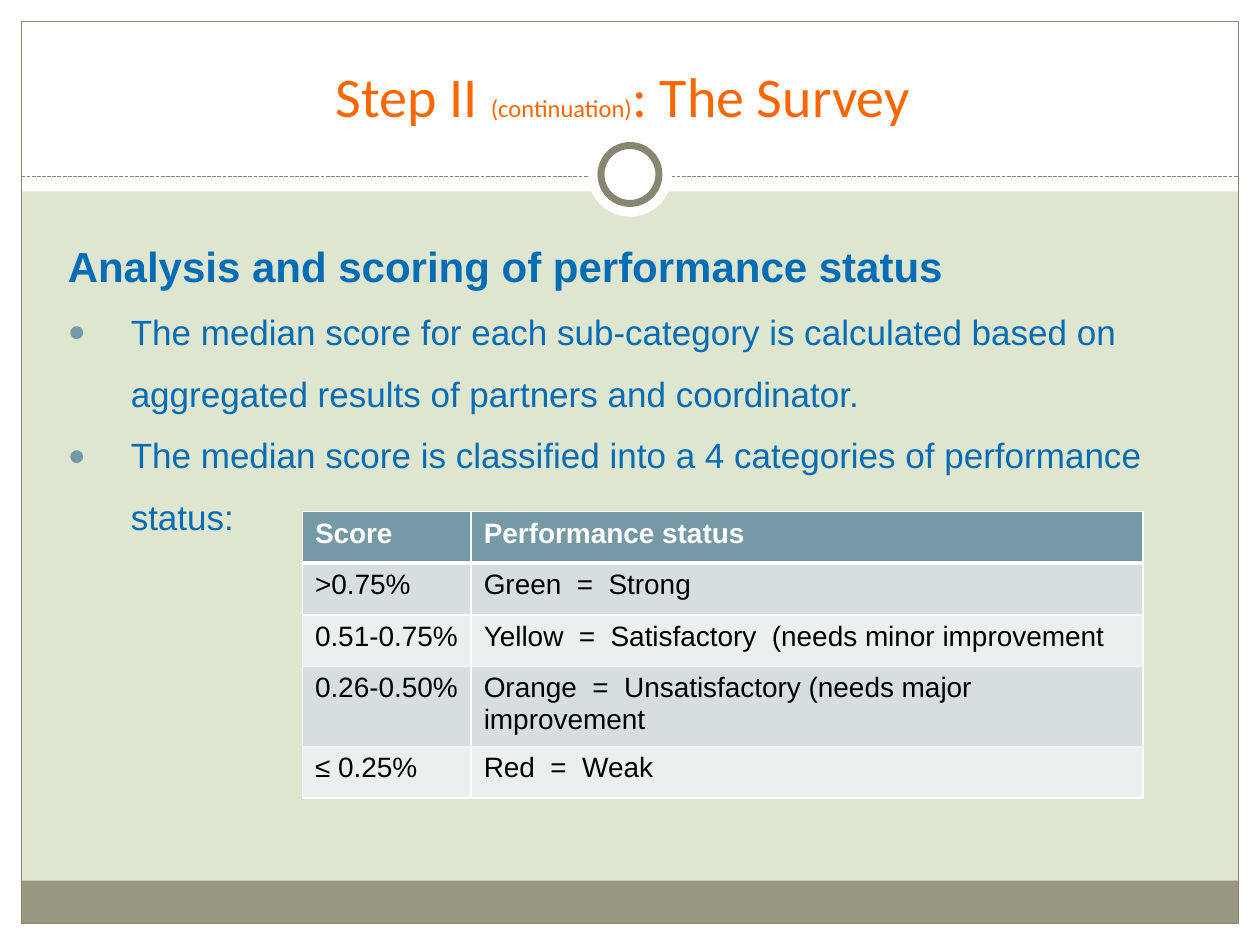
from lxml import etree
from pptx import Presentation
from pptx.dml.color import RGBColor
from pptx.enum.dml import MSO_LINE
from pptx.enum.shapes import MSO_CONNECTOR, MSO_SHAPE
from pptx.enum.text import MSO_ANCHOR, PP_ALIGN
from pptx.oxml.ns import qn
from pptx.util import Inches, Pt

RECTANGLE, OVAL = MSO_SHAPE.RECTANGLE, MSO_SHAPE.OVAL
STRAIGHT, DASH = MSO_CONNECTOR.STRAIGHT, MSO_LINE.SQUARE_DOT
BOTTOM, CENTER = MSO_ANCHOR.BOTTOM, PP_ALIGN.CENTER

COLORS = {
    "background": "DFE6D0", "white": "FFFFFF", "footer": "99987F",
    "frame": "878670", "title": "FF6600", "body": "056CB6",
    "accent": "759AA5", "band_dark": "D6DEE1", "band_light": "ECEFF0",
    "black": "000000",
}
WIDTH, HEIGHT, MARGIN = 10, 7.5, 0.17

TITLE_RUNS = [("Step II ", 32), ("(continuation)", 14), (": The Survey", 32)]
HEADING = "Analysis and scoring of performance status"
BULLETS = [
    "The median score for each sub-category is calculated based on "
    "aggregated results of partners and coordinator.",
    "The median score is classified into a 4 categories of performance status:",
]
SCORES = [
    ("Score", "Performance status"),
    (">0.75%", "Green  =  Strong"),
    ("0.51-0.75%", "Yellow  =  Satisfactory  (needs minor improvement"),
    ("0.26-0.50%", "Orange  =  Unsatisfactory (needs major improvement"),
    ("≤ 0.25%", "Red  =  Weak"),
]


def rgb(name):
    return RGBColor.from_string(COLORS[name])


def add_run(paragraph, text, color, **font_format):
    run = paragraph.add_run()
    run.text = text
    run.font.color.rgb = rgb(color)
    for name, value in font_format.items():
        setattr(run.font, name, value)


def add_box(slide, kind, box, fill=None, line=None, weight=0.75):
    shape = slide.shapes.add_shape(kind, *map(Inches, box))
    shape.shadow.inherit = False
    if fill:
        shape.fill.solid()
        shape.fill.fore_color.rgb = rgb(fill)
    else:
        shape.fill.background()
    if line:
        shape.line.color.rgb = rgb(line)
        shape.line.width = Pt(weight)
    else:
        shape.line.fill.background()


def add_text_frame(slide, box):
    frame = slide.shapes.add_textbox(*map(Inches, box)).text_frame
    frame.word_wrap = True
    return frame


def add_border(slide, box):
    """White margins, footer band and thin frame around the slide."""
    left, top, width, height = box
    inner_width = width - 2 * MARGIN
    bottom = top + height - MARGIN
    margins = [
        (left, bottom, width, MARGIN),
        (left, top, width, 1.52),
        (left, top, MARGIN, height),
        (left + width - MARGIN, top, MARGIN, height),
    ]
    for margin in margins:
        add_box(slide, RECTANGLE, margin, "white")
    add_box(slide, RECTANGLE, (left + MARGIN, bottom - 0.34, inner_width, 0.34), "footer")
    add_box(slide, RECTANGLE,
            (left + MARGIN, top + MARGIN, inner_width, height - 2 * MARGIN), line="frame")


def add_divider(slide, box):
    """Dashed rule with a ring in its middle."""
    left, top, width, height = box
    rule_y = Inches(top + 0.35)
    rule = slide.shapes.add_connector(
        STRAIGHT, Inches(left), rule_y, Inches(left + width), rule_y)
    rule.line.color.rgb = rgb("frame")
    rule.line.width = Pt(0.75)
    rule.line.dash_style = DASH
    etree.SubElement(rule._element.spPr, qn("a:effectLst"))

    center_x, center_y = left + width / 2, top + height / 2
    for size, line in ((height, None), (0.46, "frame")):
        ring = (center_x - size / 2, center_y - size / 2, size, size)
        add_box(slide, OVAL, ring, "white", line, weight=4)


def add_title(slide, box):
    frame = add_text_frame(slide, box)
    frame.vertical_anchor = BOTTOM
    frame.margin_bottom = Inches(0.02)
    paragraph = frame.paragraphs[0]
    paragraph.alignment = CENTER
    for text, size in TITLE_RUNS:
        add_run(paragraph, text, "title", name="Calibri", size=Pt(size))


def set_indent(paragraph, left, first=0, bullet=None):
    properties = paragraph._p.get_or_add_pPr()
    properties.set("marL", str(Inches(left)))
    properties.set("indent", str(Inches(first)))
    if bullet:
        color = etree.SubElement(properties, qn("a:buClr"))
        etree.SubElement(color, qn("a:srgbClr"), val=COLORS["accent"])
        etree.SubElement(properties, qn("a:buSzPct"), val="85000")
        etree.SubElement(properties, qn("a:buFont"), typeface="Arial")
        etree.SubElement(properties, qn("a:buChar"), char=bullet)


def add_body(slide, box):
    frame = add_text_frame(slide, box)
    heading = frame.paragraphs[0]
    heading.line_spacing = 1.47
    set_indent(heading, 0.11)
    add_run(heading, HEADING, "body", name="Arial", size=Pt(24), bold=True)
    for text in BULLETS:
        paragraph = frame.add_paragraph()
        paragraph.line_spacing = 1.47
        set_indent(paragraph, 0.61, -0.5, "●")
        add_run(paragraph, text, "body", name="Arial", size=Pt(20), bold=False)


def set_cell_borders(cell, header):
    """White rules, thicker on both sides of the edge below the header."""
    properties = cell._tc.get_or_add_tcPr()
    weights = {"a:lnL": 1, "a:lnR": 1, "a:lnT": 1, "a:lnB": 3 if header else 1}
    for tag, weight in weights.items():
        line = etree.SubElement(properties, qn(tag), w=str(Pt(weight)))
        fill = etree.SubElement(line, qn("a:solidFill"))
        etree.SubElement(fill, qn("a:srgbClr"), val=COLORS["white"])


def add_score_table(slide, box):
    table = slide.shapes.add_table(len(SCORES), 2, *map(Inches, box)).table
    for column, width in zip(table.columns, (1.34, box[2] - 1.34)):
        column.width = Inches(width)
    for index, texts in enumerate(SCORES):
        header = index == 0
        # The long "Orange" entry takes two lines
        table.rows[index].height = Inches(0.59 if index == 3 else 0.41)
        fill = "accent" if header else ("band_light", "band_dark")[index % 2]
        for column, text in enumerate(texts):
            cell = table.cell(index, column)
            set_cell_borders(cell, header)
            cell.fill.solid()
            cell.fill.fore_color.rgb = rgb(fill)
            add_run(cell.text_frame.paragraphs[0], text,
                    "white" if header else "black",
                    name="Arial", size=Pt(16), bold=header)
    # The edge under the header is shared with the first data row
    for cell in table.rows[1].cells:
        cell._tc.tcPr.find(qn("a:lnT")).set("w", str(Pt(3)))


def main():
    presentation = Presentation()
    presentation.slide_width = Inches(WIDTH)
    presentation.slide_height = Inches(HEIGHT)
    slide = presentation.slides.add_slide(presentation.slide_layouts[6])
    slide.background.fill.solid()
    slide.background.fill.fore_color.rgb = rgb("background")

    add_border(slide, (0, 0, WIDTH, HEIGHT))
    add_divider(slide, (MARGIN, 1.05, WIDTH - 2 * MARGIN, 0.67))
    add_title(slide, (0.28, 0.21, 9.33, 0.83))
    add_body(slide, (0.33, 1.67, 9.3, 5))
    add_score_table(slide, (2.4, 4.06, 6.67, 2.23))
    presentation.save("out.pptx")


if __name__ == "__main__":
    main()
